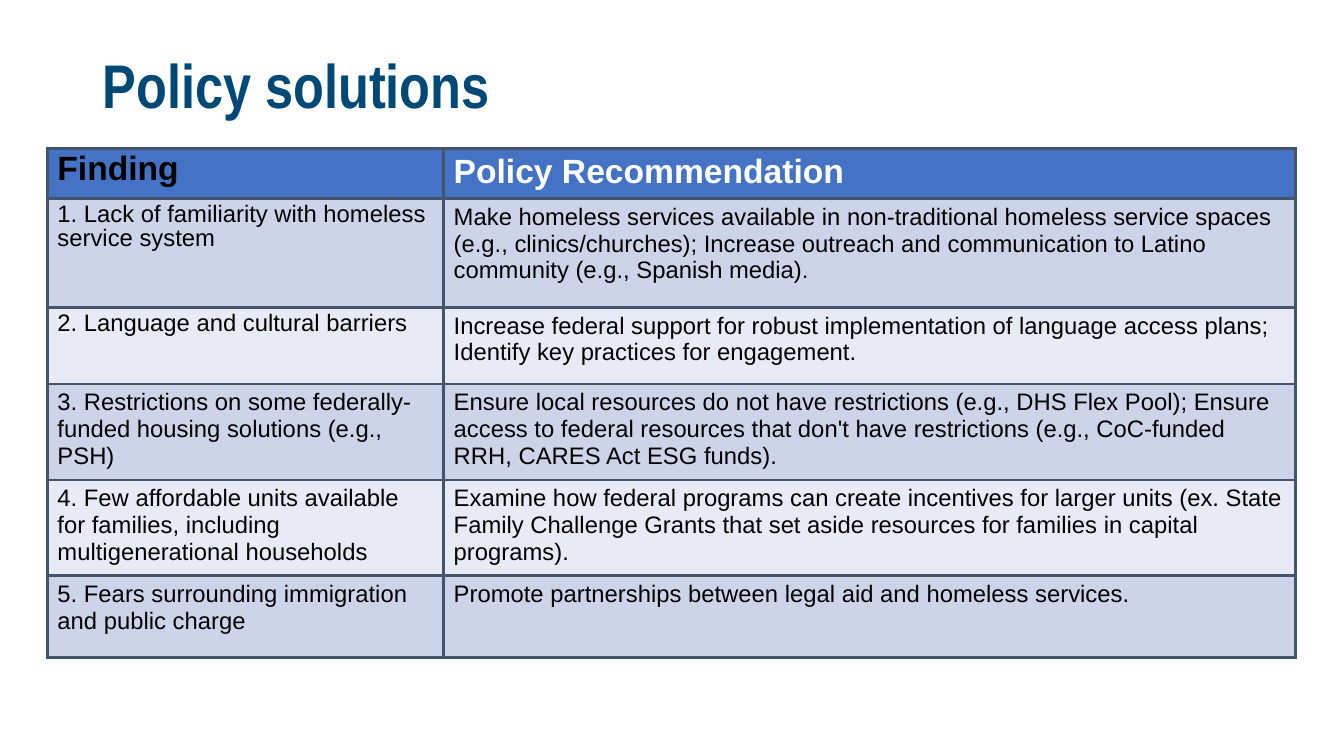
from lxml.etree import SubElement
from pptx import Presentation
from pptx.dml.color import RGBColor
from pptx.enum.text import MSO_ANCHOR
from pptx.oxml.ns import qn
from pptx.util import Inches, Pt

TITLE = "Policy solutions"
HEADINGS = ("Finding", "Policy Recommendation")
FINDINGS = [
    ("1. Lack of familiarity with homeless service system",
     "Make homeless services available in non-traditional homeless service spaces "
     "(e.g., clinics/churches); Increase outreach and communication to Latino "
     "community (e.g., Spanish media)."),
    ("2. Language and cultural barriers",
     "Increase federal support for robust implementation of language access "
     "plans; Identify key practices for engagement."),
    ("3. Restrictions on some federally-funded housing solutions (e.g., PSH)",
     "Ensure local resources do not have restrictions (e.g., DHS Flex Pool); Ensure "
     "access to federal resources that don't have restrictions (e.g., CoC-funded "
     "RRH, CARES Act ESG funds)."),
    ("4. Few affordable units available for families, including multigenerational "
     "households",
     "Examine how federal programs can create incentives for larger units (ex. State "
     "Family Challenge Grants that set aside resources for families in capital "
     "programs)."),
    ("5. Fears surrounding immigration and public charge",
     "Promote partnerships between legal aid and homeless services."),
]
COLUMN_WIDTHS = (3.93, 8.45)
ROW_HEIGHTS = (0.48, 1.08, 0.76, 0.9, 0.9, 0.81)
TIGHT_ROWS = 3  # the first rows of the Finding column have closer lines
TIGHT_SPACING = 0.9

THEME = {
    "title_font": "Arial Narrow", "body_font": "Arial",
    "title_size": 44, "heading_size": 24, "body_size": 17,
    "title": "004976", "text": "000000", "heading_text": "FFFFFF",
    "heading_fill": "4472C4", "bands": ("CDD4EA", "E8EBF5"),
    "border": "44546A", "border_width": 2.25,
}


def write(frame, text, *, size, color, font=THEME["body_font"], bold=False, spacing=None):
    paragraph = frame.paragraphs[0]
    paragraph.line_spacing = spacing
    run = paragraph.add_run()
    run.text = text
    run.font.name = font
    run.font.size = Pt(size)
    run.font.bold = bold
    run.font.color.rgb = RGBColor.from_string(color)


def paint(cell, fill):
    """Give the cell its four borders and its fill."""
    properties = cell._tc.get_or_add_tcPr()
    for side in ("a:lnL", "a:lnR", "a:lnT", "a:lnB"):
        line = SubElement(properties, qn(side), w=str(Pt(THEME["border_width"])))
        solid = SubElement(line, qn("a:solidFill"))
        SubElement(solid, qn("a:srgbClr"), val=THEME["border"])
    cell.fill.solid()
    cell.fill.fore_color.rgb = RGBColor.from_string(fill)


def add_title(slide):
    frame = slide.shapes.add_textbox(
        Inches(0.92), Inches(0.15), Inches(11.5), Inches(1.45)).text_frame
    frame.word_wrap = True
    frame.vertical_anchor = MSO_ANCHOR.MIDDLE
    write(frame, TITLE, size=THEME["title_size"], color=THEME["title"],
          font=THEME["title_font"], bold=True, spacing=TIGHT_SPACING)


def add_findings(slide):
    rows = [HEADINGS, *FINDINGS]
    table = slide.shapes.add_table(
        len(rows), len(HEADINGS), Inches(0.47), Inches(1.47),
        Inches(sum(COLUMN_WIDTHS)), Inches(sum(ROW_HEIGHTS))).table
    for column, width in zip(table.columns, COLUMN_WIDTHS):
        column.width = Inches(width)
    for row, height in zip(table.rows, ROW_HEIGHTS):
        row.height = Inches(height)

    for r, texts in enumerate(rows):
        heading = r == 0
        fill = THEME["heading_fill"] if heading else THEME["bands"][(r - 1) % 2]
        for c, text in enumerate(texts):
            cell = table.cell(r, c)
            paint(cell, fill)
            write(cell.text_frame, text,
                  size=THEME["heading_size" if heading else "body_size"],
                  color=THEME["heading_text" if heading and c == 1 else "text"],
                  bold=heading,
                  spacing=TIGHT_SPACING if c == 0 and r < TIGHT_ROWS else None)


def main():
    deck = Presentation()
    deck.slide_width, deck.slide_height = Inches(13.33), Inches(7.5)
    slide = deck.slides.add_slide(deck.slide_layouts[6])
    add_title(slide)
    add_findings(slide)
    deck.save("out.pptx")


if __name__ == "__main__":
    main()
